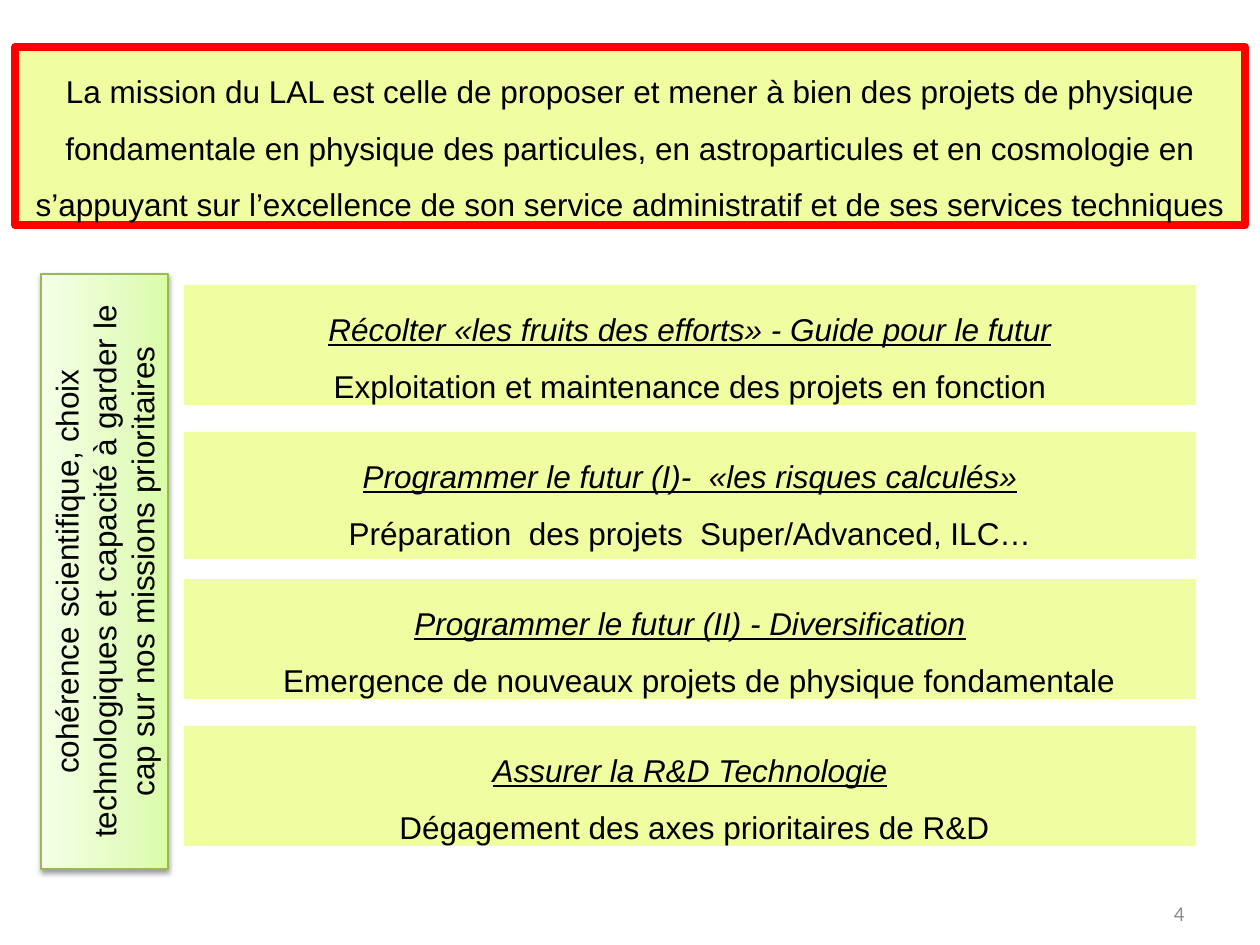
from copy import deepcopy
from dataclasses import dataclass

from lxml.etree import SubElement
from pptx import Presentation
from pptx.dml.color import RGBColor
from pptx.enum.shapes import MSO_SHAPE as Preset
from pptx.enum.text import MSO_ANCHOR as Anchor, PP_ALIGN as Align
from pptx.oxml.ns import qn
from pptx.shapes.autoshape import Shape
from pptx.slide import Slide
from pptx.util import Emu, Pt

EMU_PER_PX = 914400 / 126


@dataclass(frozen=True)
class Theme:
    card: str = "F0FDA1"
    alert: str = "FF0000"
    ink: str = "000000"
    muted: str = "8C8C8C"
    side_line: str = "98B955"
    side_stops: tuple = ((0, "DAFDA7"), (0.35, "E4FCC2"), (1, "F5FFE7"))
    body_font: str = "Arial"
    number_font: str = "Calibri"
    body_size: int = 18
    number_size: int = 12


@dataclass(frozen=True)
class Area:
    left: int
    top: int
    width: int
    height: int

    def emu(self) -> list[Emu]:
        return [px(n) for n in (self.left, self.top, self.width, self.height)]


@dataclass(frozen=True)
class Card:
    title: str
    detail: str
    height: int = 120
    indent: int = 0


THEME = Theme()
MISSION = (
    "La mission du LAL est celle de proposer et mener à bien des projets de physique "
    "fondamentale en physique des particules, en astroparticules et en cosmologie en "
    "s’appuyant sur l’excellence de son service administratif et de ses services techniques"
)
SIDE_TEXT = (
    "cohérence scientifique, choix technologiques et capacité à garder le "
    "cap sur nos missions prioritaires"
)
CARDS = (
    Card("Récolter «les fruits des efforts» - Guide pour le futur",
         "Exploitation et maintenance des projets en fonction"),
    Card("Programmer le futur (I)-  «les risques calculés»",
         "Préparation  des projets  Super/Advanced, ILC…", height=127),
    Card("Programmer le futur (II) - Diversification",
         "Emergence de nouveaux projets de physique fondamentale", indent=18),
    Card("Assurer la R&D Technologie",
         "Dégagement des axes prioritaires de R&D", indent=9),
)
CARD_LEFT, CARD_TOP, CARD_WIDTH, CARD_PITCH = 184, 285, 1012, 147


def px(length: int) -> Emu:
    """Turn pixels into EMU."""
    return Emu(round(length * EMU_PER_PX))


def color(code: str) -> RGBColor:
    """Read a hexadecimal colour."""
    return RGBColor.from_string(code)


def write(box: Shape, text: str, *, first: bool = True, align: Align = Align.CENTER,
          spacing: float = 1.0, indent: int = 0, font: str = THEME.body_font,
          size: int = THEME.body_size, ink: str = THEME.ink, title: bool = False) -> None:
    """Write one formatted paragraph into a box."""
    frame = box.text_frame
    para = frame.paragraphs[0] if first else frame.add_paragraph()
    para.alignment, para.line_spacing = align, spacing
    if indent:
        para._p.get_or_add_pPr().set("marL", str(px(indent)))
    span = para.add_run()
    span.text = text
    span.font.name, span.font.size = font, Pt(size)
    span.font.color.rgb = color(ink)
    span.font.italic = span.font.underline = title


def add_panel(page: Slide, area: Area, line: str | None = None, weight: float = 0) -> Shape:
    """Add a flat rectangle with text starting at its top."""
    box = page.shapes.add_shape(Preset.RECTANGLE, *area.emu())
    box.shadow.inherit = False
    box.fill.solid()
    box.fill.fore_color.rgb = color(THEME.card)
    if line:
        box.line.color.rgb = color(line)
        box.line.width = Pt(weight)
    else:
        box.line.fill.background()
    box.text_frame.word_wrap = True
    box.text_frame.vertical_anchor = Anchor.TOP
    return box


def add_card(page: Slide, card: Card, top: int) -> None:
    """Add a panel holding a title and its detail."""
    box = add_panel(page, Area(CARD_LEFT, top, CARD_WIDTH, card.height))
    write(box, card.title, spacing=1.5, title=True)
    write(box, card.detail, first=False, spacing=1.5, indent=card.indent)


def shade(box: Shape) -> None:
    """Give a box the side gradient and a soft shadow."""
    box.fill.gradient()
    box.fill.gradient_angle = 90
    properties = box._element.spPr
    stop_list = properties.find(".//" + qn("a:gsLst"))
    stop_list.append(deepcopy(stop_list[0]))
    for stop, (position, code) in zip(box.fill.gradient_stops, THEME.side_stops):
        stop.position, stop.color.rgb = position, color(code)
    shadow = SubElement(properties.find(qn("a:effectLst")), qn("a:outerShdw"),
                        blurRad=str(Pt(3.1)), dist=str(Pt(1.6)), dir="5400000",
                        rotWithShape="0")
    tone = SubElement(shadow, qn("a:srgbClr"), val=THEME.ink)
    SubElement(tone, qn("a:alpha"), val="38000")


def add_side(page: Slide) -> None:
    """Add the upright label beside the cards."""
    box = add_panel(page, Area(-193, 508, 595, 127), THEME.side_line, 0.75)
    box.rotation = 270
    shade(box)
    write(box, SIDE_TEXT)


def add_number(page: Slide) -> None:
    """Add the page number."""
    box = page.shapes.add_textbox(*Area(903, 888, 294, 50).emu())
    box.text_frame.word_wrap = True
    box.text_frame.vertical_anchor = Anchor.MIDDLE
    write(box, "4", align=Align.RIGHT, font=THEME.number_font,
          size=THEME.number_size, ink=THEME.muted)


def main() -> None:
    """Build and save the deck."""
    deck = Presentation()
    deck.slide_width, deck.slide_height = px(1260), px(945)
    page = deck.slides.add_slide(deck.slide_layouts[6])
    header = add_panel(page, Area(15, 47, 1230, 178), THEME.alert, 4.5)
    write(header, MISSION, spacing=1.5)
    for index, card in enumerate(CARDS):
        add_card(page, card, CARD_TOP + index * CARD_PITCH)
    add_side(page)
    add_number(page)
    deck.save("out.pptx")


if __name__ == "__main__":
    main()
